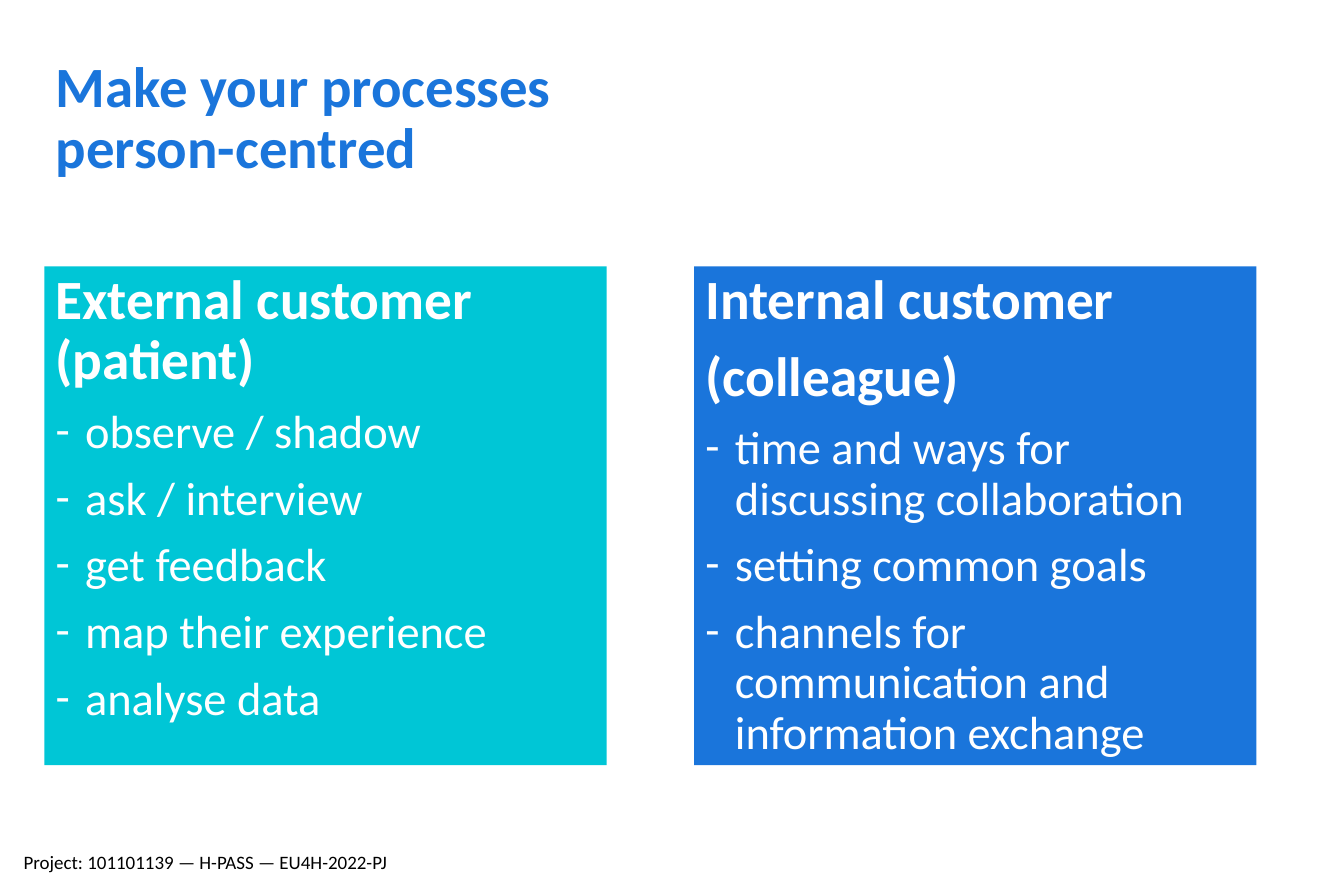
from dataclasses import dataclass

from lxml.etree import SubElement
from pptx import Presentation
from pptx.dml.color import RGBColor as RGB
from pptx.enum.shapes import MSO_SHAPE as Shape
from pptx.enum.text import MSO_ANCHOR as Anchor, PP_ALIGN as Align
from pptx.oxml.ns import qn
from pptx.util import Inches, Pt


@dataclass(frozen=True)
class Theme:
    font: str = "Calibri"
    blue: str = "1A75DB"
    teal: str = "00C6D6"
    white: str = "FFFFFF"
    black: str = "000000"
    title: float = 36
    head: float = 35
    item: float = 29.4
    foot: float = 12
    lead: float = 0.9
    gap: float = 10.5
    indent: float = 0.26


class Deck:
    def __init__(self, theme, width, height):
        self.theme = theme
        self.file = Presentation()
        self.file.slide_width = Inches(width)
        self.file.slide_height = Inches(height)
        self.slide = self.file.slides.add_slide(self.file.slide_layouts[6])

    def style(self, para, size, color, bold=False):
        para.alignment = Align.LEFT
        font = para.font
        font.name, font.size, font.bold = self.theme.font, Pt(size), bold
        font.color.rgb = RGB.from_string(color)

    def dash(self, para):
        """Give the paragraph a hanging dash bullet."""
        props = para._p.get_or_add_pPr()
        indent = Inches(self.theme.indent)
        props.set("marL", str(indent))
        props.set("indent", str(-indent))
        SubElement(props, qn("a:buFont"), typeface=self.theme.font)
        SubElement(props, qn("a:buChar"), char="-")

    def label(self, text, box, size, color, bold=False, lead=1.0, anchor=Anchor.TOP):
        frame = self.slide.shapes.add_textbox(*map(Inches, box)).text_frame
        frame.word_wrap = True
        frame.vertical_anchor = anchor
        para = frame.paragraphs[0]
        para.text = text
        para.line_spacing = lead
        self.style(para, size, color, bold)

    def panel(self, box, fill, heads, items):
        """Draw a filled box with bold heading lines above dashed items."""
        theme = self.theme
        shape = self.slide.shapes.add_shape(Shape.RECTANGLE, *map(Inches, box))
        shape.shadow.inherit = False
        shape.fill.solid()
        shape.fill.fore_color.rgb = RGB.from_string(fill)
        shape.line.fill.background()
        frame = shape.text_frame
        frame.word_wrap = True
        frame.vertical_anchor = Anchor.TOP
        for i, text in enumerate(heads + items):
            para = frame.add_paragraph() if i else frame.paragraphs[0]
            para.text = text
            para.line_spacing = theme.lead
            para.space_before = Pt(theme.gap if i else 0)
            head = i < len(heads)
            if not head:
                self.dash(para)
            self.style(para, theme.head if head else theme.item, theme.white, head)


def main():
    theme = Theme()
    deck = Deck(theme, 11.81, 7.87)
    deck.label("Make your processes person-centred", (0.39, 0.55, 5.86, 1.09),
               theme.title, theme.blue, True, theme.lead, Anchor.BOTTOM)
    panels = [
        (theme.teal, ["External customer (patient)"],
         ["observe / shadow", "ask / interview", "get feedback",
          "map their experience", "analyse data"]),
        (theme.blue, ["Internal customer", "(colleague)"],
         ["time and ways for discussing collaboration", "setting common goals",
          "channels for communication and information exchange"]),
    ]
    left, step = 0.39, 5.71
    for i, (fill, heads, items) in enumerate(panels):
        deck.panel((left + i * step, 2.34, 4.94, 4.38), fill, heads, items)
    deck.label("Project: 101101139 — H-PASS — EU4H-2022-PJ",
               (0.11, 7.42, 3.63, 0.27), theme.foot, theme.black)
    deck.file.save("out.pptx")


if __name__ == "__main__":
    main()
